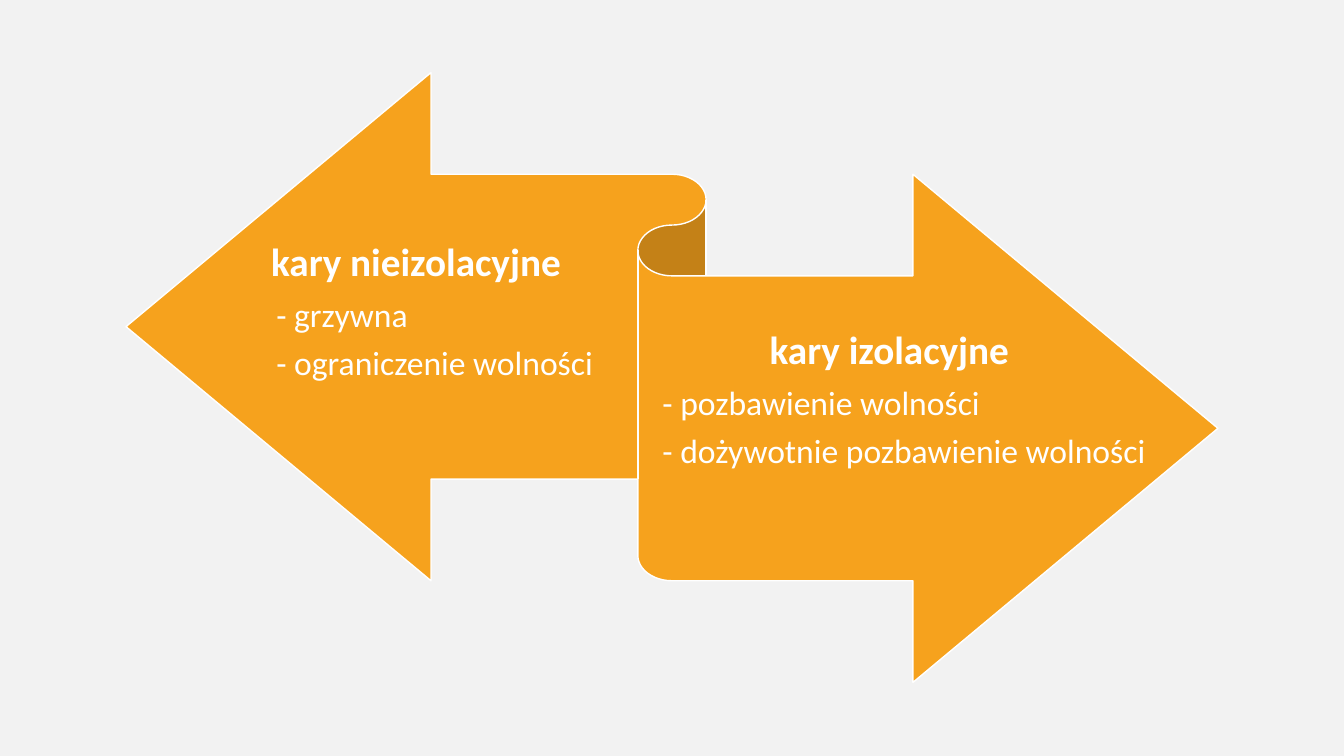
from lxml import etree
from pptx import Presentation
from pptx.dml.color import RGBColor
from pptx.enum import shapes, text
from pptx.oxml.ns import qn
from pptx.util import Inches, Pt

BACKGROUND = RGBColor(0xF2, 0xF2, 0xF2)
ORANGE = RGBColor(0xF6, 0xA2, 0x1D)
WHITE = RGBColor(0xFF, 0xFF, 0xFF)


def add_ribbon(slide, left, top, width, height):
    ribbon = slide.shapes.add_shape(
        shapes.MSO_SHAPE.LEFT_RIGHT_RIBBON,
        Inches(left), Inches(top), Inches(width), Inches(height))
    ribbon.shadow.inherit = False
    ribbon.fill.solid()
    ribbon.fill.fore_color.rgb = ORANGE
    ribbon.line.color.rgb = WHITE
    ribbon.line.width = Pt(1)
    slide.shapes._spTree.insert(2, ribbon._element)


def format_paragraph(paragraph, size, is_heading):
    paragraph.alignment = text.PP_ALIGN.CENTER if is_heading else text.PP_ALIGN.LEFT
    paragraph.line_spacing = 0.9
    paragraph.space_before = Pt(0)
    paragraph.space_after = Pt(size * 0.35)
    properties = paragraph._p.get_or_add_pPr()
    properties.set("marL", str(Inches(0 if is_heading else 0.4)))
    properties.set("indent", "0")
    etree.SubElement(properties, qn("a:buNone"))
    for run in paragraph.runs:
        run.font.name = "Calibri"
        run.font.size = Pt(size)
        run.font.bold = is_heading
        run.font.color.rgb = WHITE


def fill_penalty_list(shape, left, top, width, height, heading, penalties):
    shape.left, shape.top = Inches(left), Inches(top)
    shape.width, shape.height = Inches(width), Inches(height)
    frame = shape.text_frame
    frame.word_wrap = True
    frame.auto_size = text.MSO_AUTO_SIZE.NONE
    frame.vertical_anchor = text.MSO_ANCHOR.MIDDLE
    frame.margin_left = frame.margin_right = 0
    frame.margin_top, frame.margin_bottom = Inches(0.11), Inches(0.12)
    frame.text = "\n".join([heading, *(f"- {penalty}" for penalty in penalties)])
    for index, paragraph in enumerate(frame.paragraphs):
        format_paragraph(paragraph, 24 if index else 28, index == 0)


def main():
    presentation = Presentation()
    presentation.slide_width = Inches(13.33)
    presentation.slide_height = Inches(7.5)
    slide = presentation.slides.add_slide(
        presentation.slide_layouts.get_by_name("Two Content"))
    slide.background.fill.solid()
    slide.background.fill.fore_color.rgb = BACKGROUND

    title, left_list, right_list = list(slide.placeholders)[:3]
    title._element.getparent().remove(title._element)
    add_ribbon(slide, 1.25, 0.72, 10.83, 6.05)
    fill_penalty_list(left_list, 2.34, 2.05, 3.57, 2.12, "kary nieizolacyjne",
                      ["grzywna", "ograniczenie wolności"])
    fill_penalty_list(right_list, 6.17, 2.92, 5.3, 2.12, "kary izolacyjne",
                      ["pozbawienie wolności", "dożywotnie pozbawienie wolności"])
    presentation.save("out.pptx")


if __name__ == "__main__":
    main()
